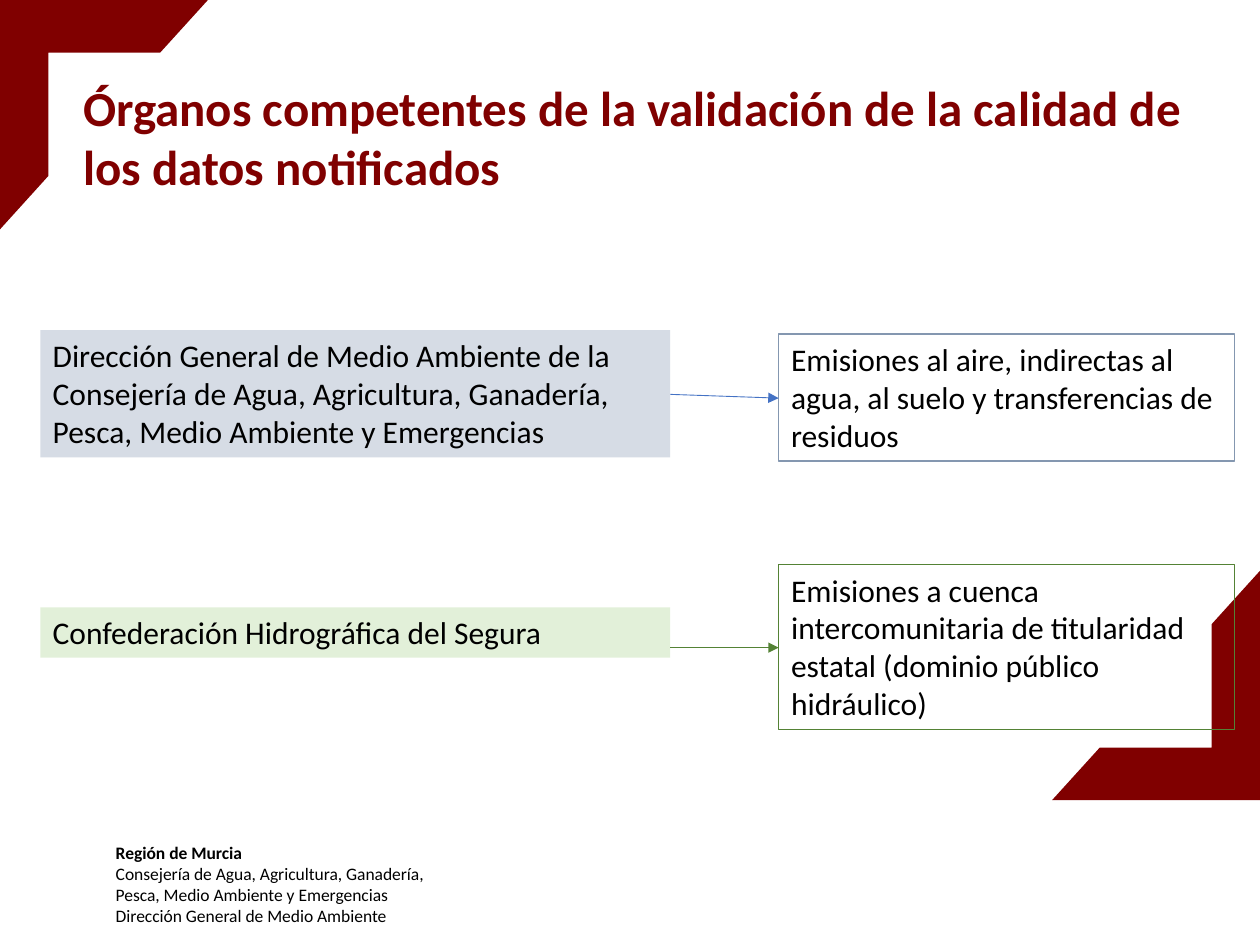
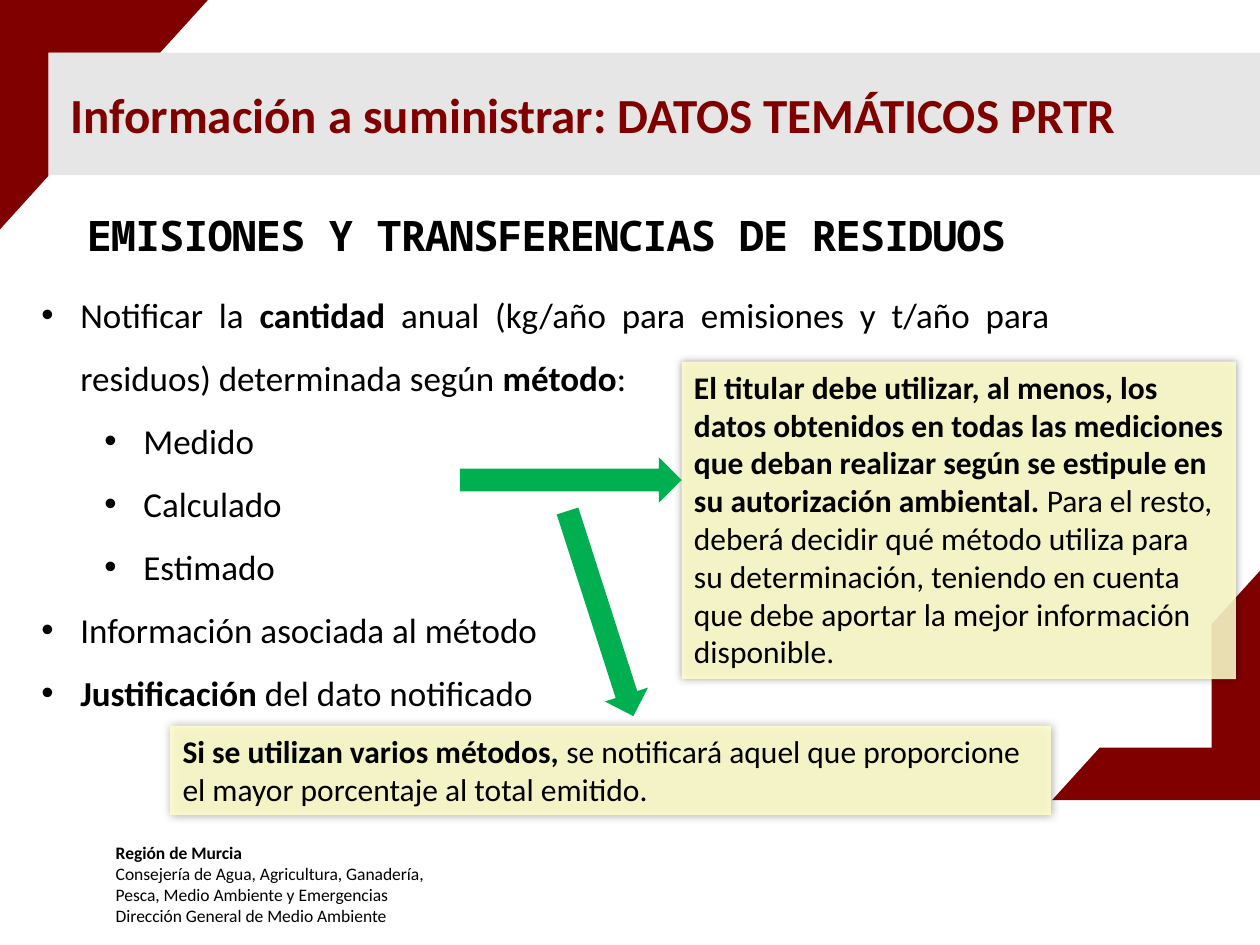
from dataclasses import dataclass
from typing import NamedTuple, Optional

from pptx import Presentation
from pptx.dml.color import RGBColor
from pptx.enum.shapes import MSO_CONNECTOR as Connector, MSO_SHAPE as Shape
from pptx.enum.text import MSO_ANCHOR as Anchor, PP_ALIGN as Align
from pptx.oxml import parse_xml
from pptx.oxml.ns import nsdecls
from pptx.oxml.xmlchemy import OxmlElement
from pptx.util import Emu, Inches, Pt

COLORS = {
    "maroon": "800000", "black": "000000", "white": "FFFFFF", "band": "E7E6E6",
    "blue_pale": "D6DCE5", "blue_edge": "8497B0", "blue_line": "4472C4",
    "green_pale": "E2F0D9", "green_edge": "548235",
    "note": "FFFFCC", "arrow": "00B050",
}
BODY, MONO = "Calibri", "Noto Sans Mono"
WIDTH, HEIGHT = Inches(10), Inches(7.5)
COLUMNS, ROWS = 100, 75

FOOTER = [
    "**Región de Murcia**",
    "Consejería de Agua, Agricultura, Ganadería,",
    "Pesca, Medio Ambiente y Emergencias",
    "Dirección General de Medio Ambiente",
]


class Area(NamedTuple):
    """Left, top, width and height in grid columns and rows."""
    left: float
    top: float
    width: float
    height: float

    def emu(self) -> list[Emu]:
        return [col(self.left), row(self.top), col(self.width), row(self.height)]


@dataclass
class Style:
    size: float = 18
    color: str = "black"
    font: str = BODY
    spacing: Optional[float] = None


@dataclass
class Box:
    area: Area
    text: str
    fill: Optional[str] = None
    edge: Optional[str] = None


class Link(NamedTuple):
    start: tuple[float, float]
    end: tuple[float, float]
    color: str


class Bullet(NamedTuple):
    text: str
    level: int = 0


class BlockArrow(NamedTuple):
    area: Area
    rotation: float = 0


TITLE_STYLE = Style(28, "maroon")
SUBTITLE_STYLE = Style(24, font=MONO, spacing=-0.6)

CORNERS = [(Area(0, 0, 16.5, 18.2), 0), (Area(83.5, 45.3, 16.5, 18.2), 180)]

BODIES_LEFT, BODIES_WIDTH = 3.2, 50
SCOPES_LEFT, SCOPES_WIDTH = 61.8, 36.2
BODIES_RIGHT = BODIES_LEFT + BODIES_WIDTH

COMPETENCES = [
    Box(Area(BODIES_LEFT, 26.2, BODIES_WIDTH, 10.1),
        "Dirección General de Medio Ambiente de la Consejería de Agua, Agricultura, "
        "Ganadería, Pesca, Medio Ambiente y Emergencias", fill="blue_pale"),
    Box(Area(BODIES_LEFT, 48.2, BODIES_WIDTH, 4),
        "Confederación Hidrográfica del Segura", fill="green_pale"),
    Box(Area(SCOPES_LEFT, 26.5, SCOPES_WIDTH, 10.1),
        "Emisiones al aire, indirectas al agua, al suelo y transferencias de residuos",
        edge="blue_edge"),
    Box(Area(SCOPES_LEFT, 44.8, SCOPES_WIDTH, 13.1),
        "Emisiones a cuenca intercomunitaria de titularidad estatal "
        "(dominio público hidráulico)", edge="green_edge"),
]
LINKS = [
    Link((BODIES_RIGHT, 31.3), (SCOPES_LEFT, 31.6), "blue_line"),
    Link((BODIES_RIGHT, 51.4), (SCOPES_LEFT, 51.4), "green_edge"),
]

BULLETS = [
    Bullet("Notificar la **cantidad **anual (kg/año para emisiones y t/año para "
           "residuos) determinada según **método**:"),
    Bullet("Medido", 1),
    Bullet("Calculado", 1),
    Bullet("Estimado", 1),
    Bullet("Información asociada al método"),
    Bullet("**Justificación** del dato notificado"),
]
METHOD_NOTE = Box(
    Area(54.1, 28.7, 44, 25.2),
    "**El titular debe utilizar, al menos, los datos obtenidos en todas las mediciones "
    "que deban realizar según se estipule en su autorización ambiental. **Para el resto, "
    "deberá decidir qué método utiliza para su determinación, teniendo en cuenta que "
    "debe aportar la mejor información disponible.", fill="note")
SEVERAL_NOTE = Box(
    Area(13.5, 57.6, 69.9, 7.1),
    "**Si se utilizan varios métodos, **se notificará aquel que proporcione el mayor "
    "porcentaje al total emitido.", fill="note")
BLOCK_ARROWS = [
    BlockArrow(Area(36.5, 36.3, 17.6, 3.6)),
    BlockArrow(Area(39.1, 46.9, 17.1, 3.6), 72.2),
]


def col(n: float) -> Emu:
    return Emu(round(WIDTH * n / COLUMNS))


def row(n: float) -> Emu:
    return Emu(round(HEIGHT * n / ROWS))


def rgb(name: str) -> RGBColor:
    return RGBColor.from_string(COLORS[name])


def write(p, text: str, style: Style) -> None:
    """Fill a paragraph; text between ** marks is bold."""
    for i, part in enumerate(text.split("**")):
        if not part:
            continue
        r = p.add_run()
        r.text = part
        r.font.name, r.font.size = style.font, Pt(style.size)
        r.font.bold = i % 2 == 1
        r.font.color.rgb = rgb(style.color)
        if style.spacing is not None:
            r._r.get_or_add_rPr().set("spc", str(round(style.spacing * 100)))


def indent(p, left: float, hanging: float = 0) -> None:
    pPr = p._p.get_or_add_pPr()
    pPr.set("marL", str(Inches(left)))
    pPr.set("indent", str(-Inches(hanging)))


def add_bullet(p) -> None:
    pPr = p._p.get_or_add_pPr()
    for tag, key, value in (("a:buFont", "typeface", "Arial"), ("a:buChar", "char", "•")):
        mark = OxmlElement(tag)
        mark.set(key, value)
        pPr.append(mark)


def add_plain(s, kind: Shape, area: Area, fill: Optional[str] = None,
              edge: Optional[str] = None):
    """Add a shape without shadow, with only the given fill and outline."""
    sp = s.shapes.add_shape(kind, *area.emu())
    sp.shadow.inherit = False
    if fill:
        sp.fill.solid()
        sp.fill.fore_color.rgb = rgb(fill)
    else:
        sp.fill.background()
    if edge:
        sp.line.color.rgb = rgb(edge)
        sp.line.width = Pt(0.75)
    else:
        sp.line.fill.background()
    return sp


def add_box(s, box: Box):
    sp = add_plain(s, Shape.RECTANGLE, box.area, box.fill, box.edge)
    tf = sp.text_frame
    tf.word_wrap, tf.vertical_anchor = True, Anchor.TOP
    tf.paragraphs[0].alignment = Align.LEFT
    write(tf.paragraphs[0], box.text, Style())
    return sp


def add_note(s, box: Box) -> None:
    """Add a translucent box with a soft shadow all round."""
    spPr = add_box(s, box)._element.spPr
    alpha = OxmlElement("a:alpha")
    alpha.set("val", "87000")
    spPr.find(".//" + "{*}srgbClr").append(alpha)
    spPr.find("{*}effectLst").append(parse_xml(
        f'<a:outerShdw {nsdecls("a")} blurRad="{Pt(5)}" dist="0" dir="0">'
        f'<a:srgbClr val="{COLORS["black"]}"><a:alpha val="40000"/></a:srgbClr>'
        '</a:outerShdw>'))


def add_link(s, link: Link) -> None:
    (x1, y1), (x2, y2) = link.start, link.end
    line = s.shapes.add_connector(Connector.STRAIGHT, col(x1), row(y1), col(x2), row(y2))
    line.line.color.rgb = rgb(link.color)
    line.line.width = Pt(0.5)
    head = OxmlElement("a:tailEnd")
    head.set("type", "triangle")
    line.line._get_or_add_ln().append(head)
    line._element.spPr.append(OxmlElement("a:effectLst"))


def add_text_frame(s, area: Area):
    tf = s.shapes.add_textbox(*area.emu()).text_frame
    tf.word_wrap = True
    return tf


def add_title(s, area: Area, text: str) -> None:
    tf = add_text_frame(s, area)
    tf.vertical_anchor = Anchor.MIDDLE
    tf.margin_left = tf.margin_right = Inches(0.07)
    tf.margin_top = tf.margin_bottom = Inches(0.04)
    write(tf.paragraphs[0], f"**{text}**", TITLE_STYLE)


def add_base_slide(prs):
    """Add a blank slide with the corner frames and the footer."""
    s = prs.slides.add_slide(prs.slide_layouts[6])
    for area, rotation in CORNERS:
        sp = add_plain(s, Shape.HALF_FRAME, area, "maroon")
        sp.adjustments[0], sp.adjustments[1] = 0.253, 0.233
        sp.rotation = rotation
    footer = add_plain(s, Shape.RECTANGLE, Area(8.2, 66.3, 26.8, 7.7), "white")
    tf = footer.text_frame
    tf.word_wrap, tf.vertical_anchor = False, Anchor.TOP
    for i, text in enumerate(FOOTER):
        p = tf.add_paragraph() if i else tf.paragraphs[0]
        p.alignment = Align.LEFT
        write(p, text, Style(10))
    return s


def build_competences(prs) -> None:
    s = add_base_slide(prs)
    add_title(s, Area(5.9, 5.7, 92.1, 10.2),
              "Órganos competentes de la validación de la calidad de los datos notificados")
    for box in COMPETENCES:
        add_box(s, box)
    for link in LINKS:
        add_link(s, link)


def build_thematic_data(prs) -> None:
    s = add_base_slide(prs)
    add_plain(s, Shape.RECTANGLE, Area(3.9, 4.2, 96.1, 9.7), "band")
    add_title(s, Area(4.9, 6.3, 93.2, 5.5),
              "Información a suministrar: DATOS TEMÁTICOS PRTR")

    p = add_text_frame(s, Area(4.9, 16.6, 81.1, 4.7)).paragraphs[0]
    indent(p, 0.1)
    p.line_spacing = 0.9
    write(p, "**EMISIONES Y TRANSFERENCIAS DE RESIDUOS**", SUBTITLE_STYLE)

    tf = add_text_frame(s, Area(2.3, 21.1, 82, 35.8))
    for i, bullet in enumerate(BULLETS):
        p = tf.add_paragraph() if i else tf.paragraphs[0]
        indent(p, 0.31 + 0.5 * bullet.level, 0.31)
        add_bullet(p)
        p.level, p.alignment, p.line_spacing = bullet.level, Align.JUSTIFY, 1.5
        write(p, bullet.text, Style(20))

    add_note(s, METHOD_NOTE)
    for arrow in BLOCK_ARROWS:
        add_plain(s, Shape.RIGHT_ARROW, arrow.area, "arrow").rotation = arrow.rotation
    add_note(s, SEVERAL_NOTE)


def main() -> None:
    prs = Presentation()
    prs.slide_width, prs.slide_height = WIDTH, HEIGHT
    build_competences(prs)
    build_thematic_data(prs)
    prs.save("out.pptx")


if __name__ == "__main__":
    main()
